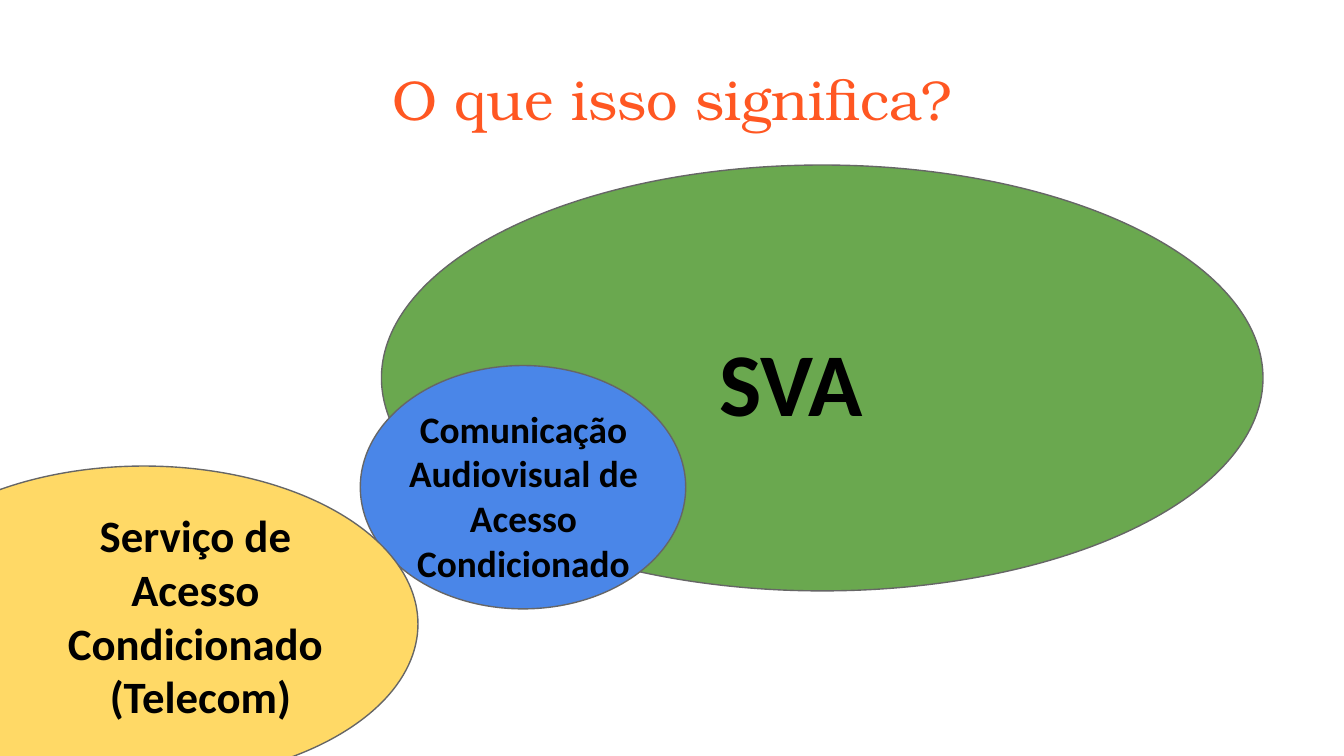
from pptx import Presentation
from pptx.dml.color import RGBColor
from pptx.enum.shapes import MSO_SHAPE
from pptx.enum.text import MSO_ANCHOR, MSO_AUTO_SIZE, PP_ALIGN
from pptx.util import Cm, Pt

OVAL, NODE = MSO_SHAPE.OVAL, MSO_SHAPE.FLOWCHART_CONNECTOR
LEFT, CENTER = PP_ALIGN.LEFT, PP_ALIGN.CENTER
TOP, FIXED = MSO_ANCHOR.TOP, MSO_AUTO_SIZE.NONE

ORANGE = RGBColor(0xFF, 0x57, 0x22)
GREEN = RGBColor(0x6A, 0xA8, 0x4F)
BLUE = RGBColor(0x4A, 0x86, 0xE8)
YELLOW = RGBColor(0xFF, 0xD9, 0x66)
GREY = RGBColor(0x66, 0x66, 0x66)
BLACK = RGBColor(0, 0, 0)


class Deck:
    """Holds the style and the current slide."""

    head = {"name": "TeX Gyre Bonum", "size": Pt(30), "bold": False}
    label = {"name": "Calibri", "bold": True}
    inset = Cm(0.25)

    def __init__(self, width, height):
        self.file = Presentation()
        self.file.slide_width, self.file.slide_height = Cm(width), Cm(height)
        self.slide = self.file.slides.add_slide(self.file.slide_layouts[5])

    def fill_text(self, frame, paras, align, style, color):
        form = {"word_wrap": True, "auto_size": FIXED, "vertical_anchor": TOP}
        for side in ("left", "top", "right", "bottom"):
            form["margin_" + side] = self.inset
        for key, value in form.items():
            setattr(frame, key, value)
        for i, line in enumerate(paras):
            para = frame.add_paragraph() if i else frame.paragraphs[0]
            para.text, para.alignment = line, align
            for run in para.runs:
                for key, value in style.items():
                    setattr(run.font, key, value)
                run.font.color.rgb = color

    def title(self, text, *box):
        shape = self.slide.shapes.title
        shape.left, shape.top, shape.width, shape.height = map(Cm, box)
        self.fill_text(shape.text_frame, [text], CENTER, self.head, ORANGE)

    def oval(self, kind, color, *box):
        shape = self.slide.shapes.add_shape(kind, *map(Cm, box))
        shape.shadow.inherit = False
        shape.fill.solid()
        shape.fill.fore_color.rgb = color
        shape.line.color.rgb = GREY
        shape.line.width = Pt(0.75)

    def text(self, paras, size, align, *box):
        frame = self.slide.shapes.add_textbox(*map(Cm, box)).text_frame
        style = {**self.label, "size": Pt(size)}
        self.fill_text(frame, paras, align, style, BLACK)


def main():
    deck = Deck(25.4, 14.29)
    deck.title("O que isso significa?", 0.87, 0.97, 23.67, 1.6)

    # Overlapping sets
    deck.oval(OVAL, GREEN, 7.21, 3.12, 16.66, 8.05)
    deck.oval(NODE, BLUE, 6.81, 6.91, 6.15, 4.6)
    deck.oval(OVAL, YELLOW, -2.46, 8.81, 10.36, 5.97)

    # Names of the sets
    deck.text(["SVA"], 48, LEFT, 13.34, 5.94, 20.4, 2.39)
    deck.text(["Comunicação\nAudiovisual de Acesso Condicionado"],
              20, CENTER, 7.29, 7.42, 5.21, 2.39)
    deck.text(["Serviço de ", "Acesso ", "Condicionado ", "(Telecom)"],
              24, CENTER, 0.36, 9.35, 6.86, 4.93)

    deck.file.save("out.pptx")


if __name__ == "__main__":
    main()
